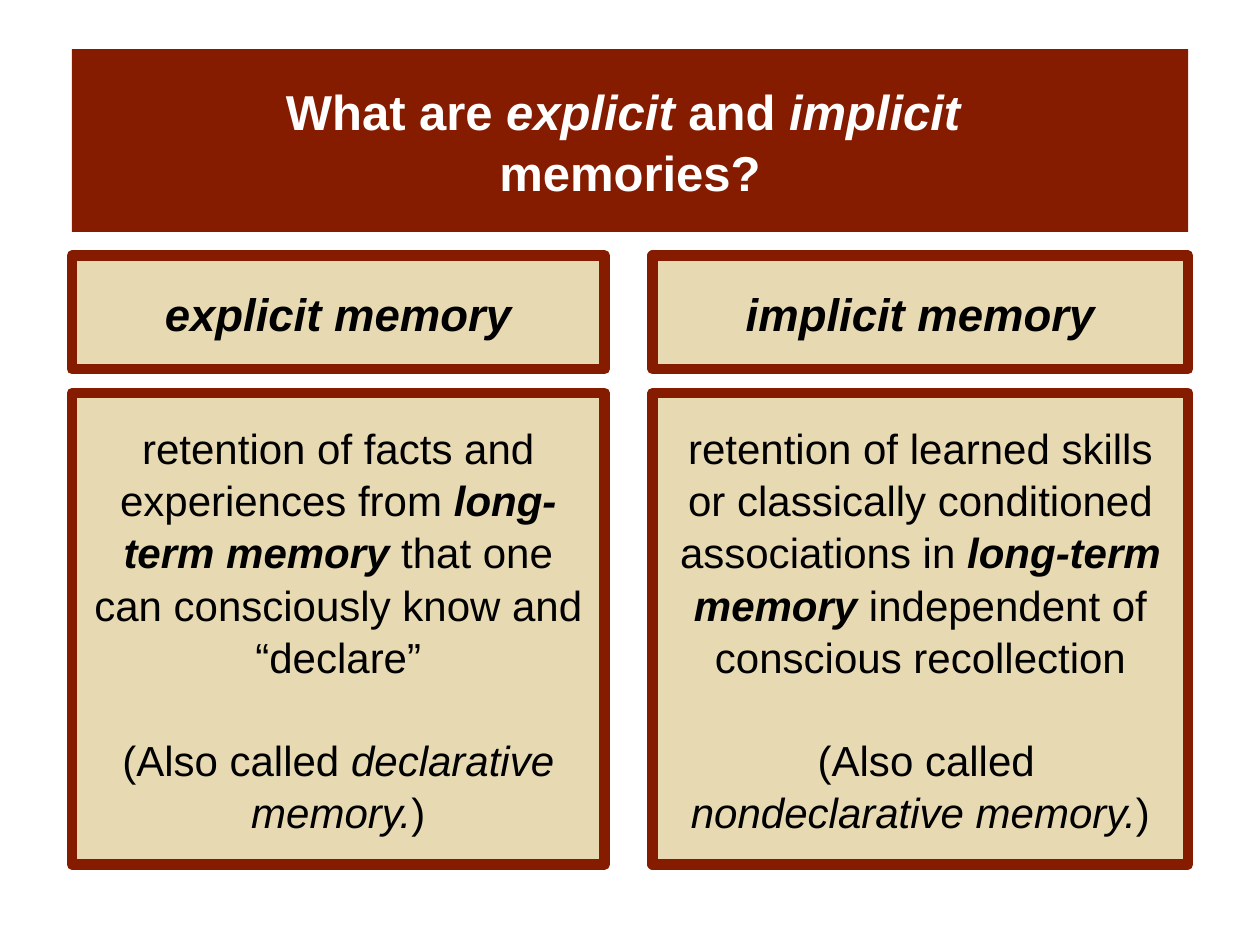
from pptx import Presentation
from pptx.dml.color import RGBColor as Rgb
from pptx.enum.shapes import MSO_SHAPE as Kind
from pptx.enum.text import MSO_ANCHOR as Anchor, PP_ALIGN as Align
from pptx.util import Inches, Pt

RED, SAND, WHITE, BLACK = "851C00", "E7D9B1", "FFFFFF", "000000"


def paint(target, color):
    target.rgb = Rgb.from_string(color)


def write(para, text, size=24, color=BLACK, bold=False, italic=False):
    run = para.add_run()
    run.text = text
    font = run.font
    font.name, font.size = "Arial", Pt(size)
    font.bold, font.italic = bold, italic
    paint(font.color, color)


class Deck:
    lead = 1.04
    edge = 6

    def __init__(self):
        self.file = Presentation()
        self.file.slide_width, self.file.slide_height = Inches(10), Inches(7.5)
        self.slide = self.file.slides.add_slide(self.file.slide_layouts[6])

    def box(self, left, top, width, height, fill, line=None):
        place = [Inches(n) for n in (left, top, width, height)]
        shape = self.slide.shapes.add_shape(Kind.RECTANGLE, *place)
        shape.shadow.inherit = False
        shape.fill.solid()
        paint(shape.fill.fore_color, fill)
        if line:
            paint(shape.line.color, line)
            shape.line.width = Pt(self.edge)
        else:
            shape.line.fill.background()
        frame = shape.text_frame
        frame.word_wrap = True
        frame.vertical_anchor = Anchor.MIDDLE
        return frame

    def para(self, frame, first=False, gap=0):
        para = frame.paragraphs[0] if first else frame.add_paragraph()
        para.alignment = Align.CENTER
        para.line_spacing = self.lead
        para.space_before = Pt(gap)
        return para

    def title(self):
        para = self.para(self.box(0.57, 0.39, 8.86, 1.45, RED), first=True)
        look = dict(size=28, color=WHITE, bold=True)
        write(para, "What are ", **look)
        write(para, "explicit ", italic=True, **look)
        write(para, "and ", **look)
        write(para, "implicit ", italic=True, **look)
        para.add_line_break()
        write(para, "memories?", **look)

    def column(self, left, width, name, start, end, call, alias, split):
        head = self.box(left, 2.03, width, 0.9, SAND, RED)
        write(self.para(head, first=True), name, size=26, bold=True, italic=True)

        body = self.box(left, 3.12, width, 3.74, SAND, RED)
        para = self.para(body, first=True)
        write(para, start)
        write(para, "long-term memory", bold=True, italic=True)
        write(para, end)
        para = self.para(body, gap=28.8)
        write(para, call)
        if split:
            para = self.para(body)
        write(para, alias, italic=True)
        write(para, ")")


def main():
    deck = Deck()
    deck.title()
    deck.column(0.57, 4.23, "explicit memory",
                "retention of facts and experiences from ",
                " that one can consciously know and “declare”",
                "(Also called ", "declarative memory.", False)
    deck.column(5.18, 4.25, "implicit memory",
                "retention of learned skills or classically conditioned associations in ",
                " independent of conscious recollection",
                " (Also called", "nondeclarative memory.", True)
    deck.file.save("out.pptx")


if __name__ == "__main__":
    main()
